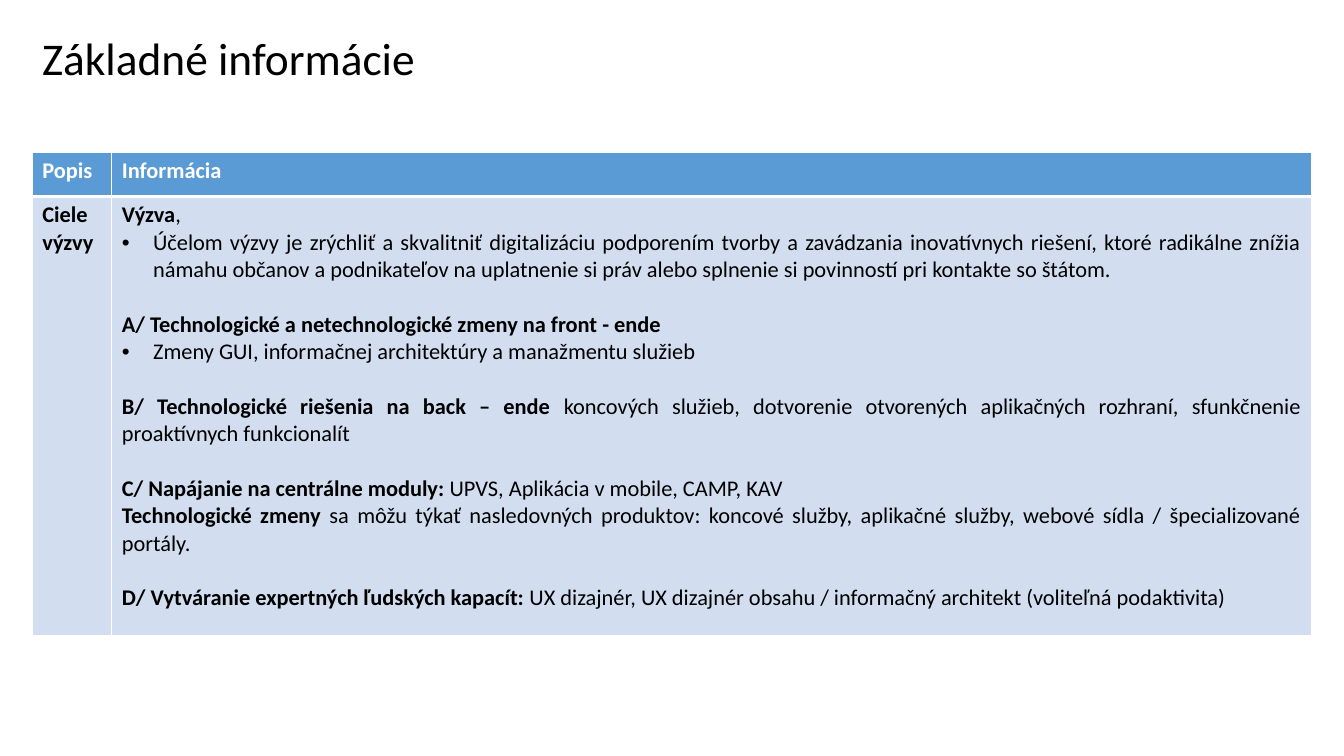
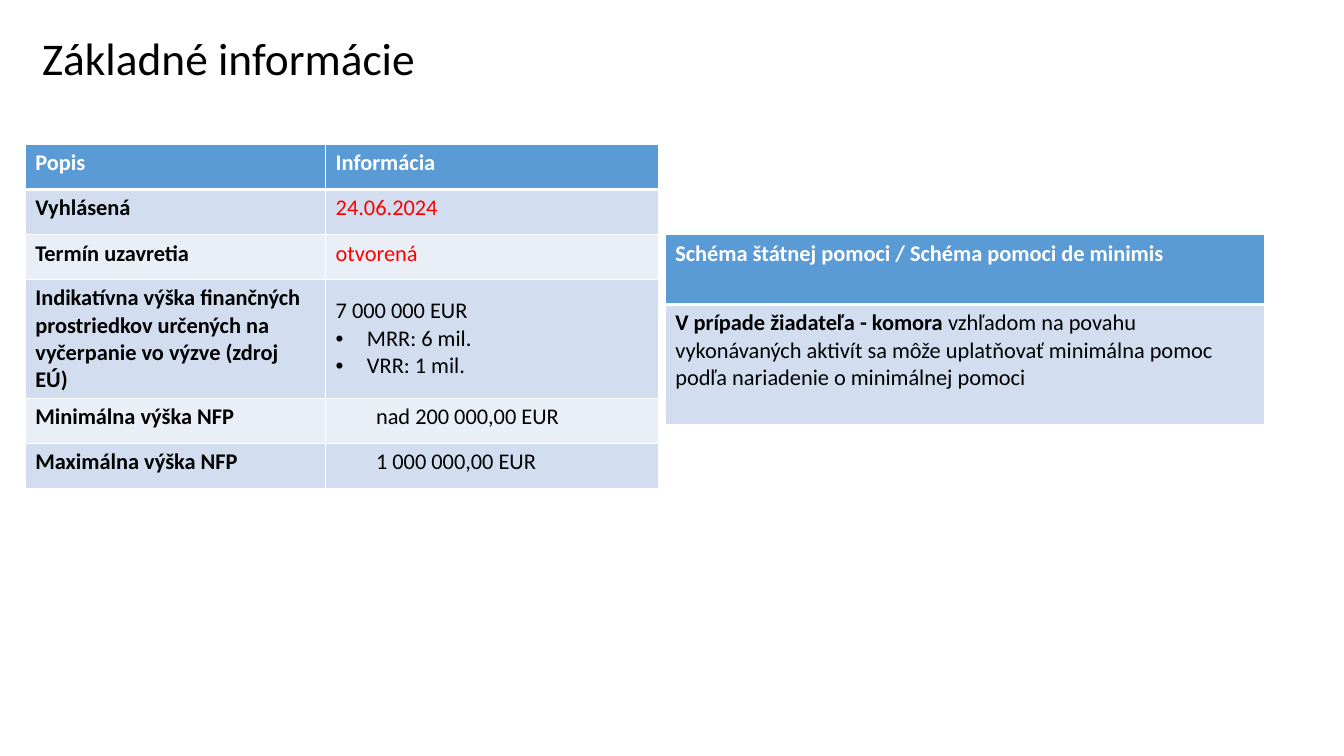
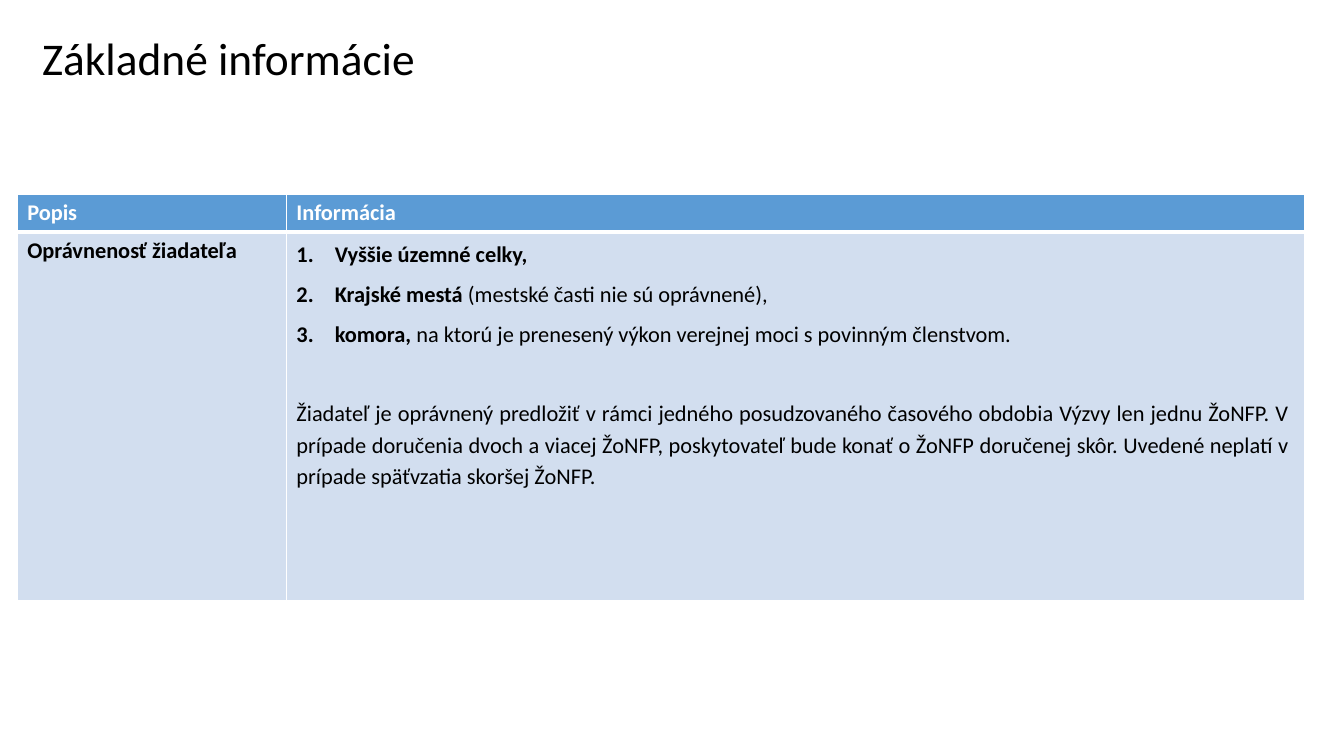
import pptx
import pptx.dml.color
import pptx.enum.text
import pptx.oxml
import pptx.oxml.ns
import pptx.util

FONT = "Calibri"
BLACK, WHITE, RED = "000000", "FFFFFF", "FF0000"
HEADER, BANDS = "5B9BD5", ("D2DEEF", "EAEFF7")
LINE = 19.5  # height in points of one 16 pt line
ALIGN = pptx.enum.text.PP_ALIGN
MIDDLE = pptx.enum.text.MSO_ANCHOR.MIDDLE

prs = pptx.Presentation()
prs.slide_width = pptx.util.Inches(13.33)
prs.slide_height = pptx.util.Inches(7.5)
W, H = prs.slide_width / 100, prs.slide_height / 100  # one percent of the slide


def rgb(value):
    return pptx.dml.color.RGBColor.from_string(value)


def text(tf, body="", lead="", size=16, color=BLACK, align=ALIGN.LEFT, marker=None,
         indent=0, before=0, after=0, spacing=1.0):
    """Add a paragraph: a bold lead, then plain body text."""
    p = tf.paragraphs[0]
    if p.runs:
        p = tf.add_paragraph()
    p.alignment, p.line_spacing = align, spacing
    p.space_before, p.space_after = pptx.util.Pt(before), pptx.util.Pt(after)
    for words, bold in ((lead, True), (body, False)):
        if words:
            r = p.add_run()
            r.text = words
            r.font.name, r.font.size = FONT, pptx.util.Pt(size)
            r.font.bold, r.font.color.rgb = bold, rgb(color)
    pPr = p._p.get_or_add_pPr()
    pPr.set("marL", str(pptx.util.Inches(indent)))
    if marker:
        pPr.set("indent", str(-pptx.util.Inches(indent)))
        ns = pptx.oxml.ns.nsdecls("a")
        parts = {"dot": ('<a:buFont %s typeface="Arial"/>', '<a:buChar %s char="•"/>'),
                 "number": ('<a:buAutoNum %s type="arabicPeriod"/>',)}
        for part in parts[marker]:
            pPr.append(pptx.oxml.parse_xml(part % ns))


# Paragraph formats
just = dict(align=ALIGN.JUSTIFY)
gap = dict(just, before=LINE)
dot = dict(marker="dot", indent=0.31)
loose = dict(just, spacing=1.15, after=6)
number = dict(loose, marker="number", indent=0.38)
amount = dict(indent=0.4)
red = dict(color=RED)

# Cell texts: each cell is a list of (lead, body, format)
goals = [
    ("Výzva", ",", just),
    ("", "Účelom výzvy je zrýchliť a skvalitniť digitalizáciu podporením tvorby a zavádzania "
     "inovatívnych riešení, ktoré radikálne znížia námahu občanov a podnikateľov na uplatnenie "
     "si práv alebo splnenie si povinností pri kontakte so štátom.", dict(just, **dot)),
    ("A/ Technologické a netechnologické zmeny na front - ende", "", gap),
    ("", "Zmeny GUI, informačnej architektúry a manažmentu služieb", dict(just, **dot)),
    ("B/ Technologické riešenia na back – ende ", "koncových služieb, dotvorenie otvorených "
     "aplikačných rozhraní, sfunkčnenie proaktívnych funkcionalít", gap),
    ("C/ Napájanie na centrálne moduly: ", "UPVS, Aplikácia v mobile, CAMP, KAV", gap),
    ("Technologické zmeny ", "sa môžu týkať nasledovných produktov: koncové služby, aplikačné "
     "služby, webové sídla / špecializované portály.", just),
    ("D/ Vytváranie expertných ľudských kapacít: ", "UX dizajnér, UX dizajnér obsahu / "
     "informačný architekt (voliteľná podaktivita)", gap),
]
funds = [("", "7 000 000 EUR", {}), ("", "MRR: 6 mil.", dot), ("", "VRR: 1 mil.", dot)]
aid = [("V prípade žiadateľa - komora ", "vzhľadom na povahu vykonávaných aktivít sa môže "
        "uplatňovať minimálna pomoc podľa nariadenie o minimálnej pomoci", {})]
applicants = [
    ("Vyššie územné celky,", "", number),
    ("Krajské mestá ", "(mestské časti nie sú oprávnené),", number),
    ("komora, ", "na ktorú je prenesený výkon verejnej moci s povinným členstvom.", number),
    ("", "Žiadateľ je oprávnený predložiť v rámci jedného posudzovaného časového obdobia Výzvy "
     "len jednu ŽoNFP. V prípade doručenia dvoch a viacej ŽoNFP, poskytovateľ bude konať o ŽoNFP "
     "doručenej skôr. Uvedené neplatí v prípade späťvzatia skoršej ŽoNFP.",
     dict(loose, before=28.5)),
]

# Slides: each a list of tables; lengths are percent of the slide's width or height
head = ["Popis", "Informácia"]
slides = [
    [dict(left=2.4, top=20.13, cols=[5.92, 89.25], rows=[5.87, 58.13],
          cells=[head, ["Ciele výzvy", goals]])],
    [dict(left=1.88, top=19.07, cols=[22.35, 24.8], rows=[6, 6, 5.87, 15.73, 6, 6],
          middle_row=3,
          cells=[head,
                 ["Vyhlásená", [("", "24.06.2024", red)]],
                 ["Termín uzavretia", [("", "otvorená", red)]],
                 ["Indikatívna výška finančných prostriedkov určených na vyčerpanie "
                  "vo výzve (zdroj EÚ)", funds],
                 ["Minimálna výška NFP", [("", "nad 200 000,00 EUR", amount)]],
                 ["Maximálna výška NFP", [("", "1 000 000,00 EUR", amount)]]]),
     dict(left=49.5, top=31.07, cols=[44.63], rows=[9.2, 15.87],
          cells=[["Schéma štátnej pomoci / Schéma pomoci de minimis"], [aid]])],
    [dict(left=1.28, top=25.73, cols=[20.03, 75.75], rows=[4.93, 48.8], margin_right=0.15,
          cells=[head, ["Oprávnenosť žiadateľa", applicants]])],
]

for tables in slides:
    s = prs.slides.add_slide(prs.slide_layouts[6])

    # Title
    sp = s.shapes.add_textbox(int(2.4 * W), int(4.7 * H), int(75 * W), int(6.8 * H))
    tf = sp.text_frame
    tf.word_wrap, tf.vertical_anchor = True, MIDDLE
    tf.margin_top = tf.margin_bottom = 0
    text(tf, "Základné informácie", size=32.4, spacing=0.9)

    # Tables
    for t in tables:
        cols, rows = t["cols"], t["rows"]
        table = s.shapes.add_table(len(rows), len(cols), int(t["left"] * W), int(t["top"] * H),
                                   int(sum(cols) * W), int(sum(rows) * H)).table
        table.horz_banding = False
        for c, width in enumerate(cols):
            table.columns[c].width = int(width * W)
        for r, height in enumerate(rows):
            table.rows[r].height = int(height * H)
            for c, content in enumerate(t["cells"][r]):
                cell = table.cell(r, c)
                # White borders, thick below the header
                thick = {0: "lnB", 1: "lnT"}.get(r)
                for side in ("lnL", "lnR", "lnT", "lnB"):
                    weight = pptx.util.Pt(3 if side == thick else 1)
                    cell._tc.get_or_add_tcPr().append(pptx.oxml.parse_xml(
                        f'<a:{side} {pptx.oxml.ns.nsdecls("a")} w="{weight}"><a:solidFill>'
                        f'<a:srgbClr val="{WHITE}"/></a:solidFill></a:{side}>'))
                cell.fill.solid()
                cell.fill.fore_color.rgb = rgb(BANDS[(r - 1) % 2] if r else HEADER)
                if r and r == t.get("middle_row"):
                    cell.vertical_anchor = MIDDLE
                if r and c:
                    cell.margin_right = pptx.util.Inches(t.get("margin_right", 0.1))
                # A plain string is a bold label
                if isinstance(content, str):
                    content = [(content, "", dict(color=BLACK if r else WHITE))]
                for lead, body, form in content:
                    text(cell.text_frame, body, lead, **form)

prs.save("out.pptx")
